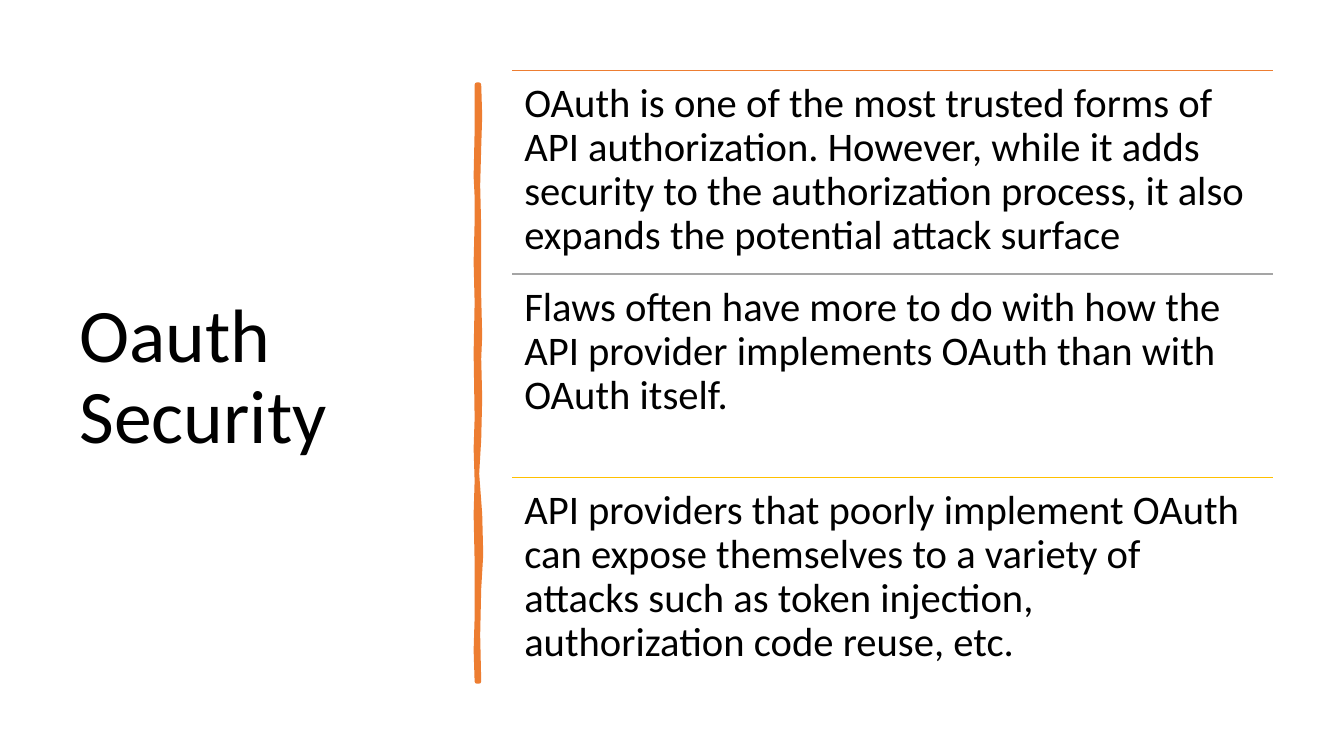
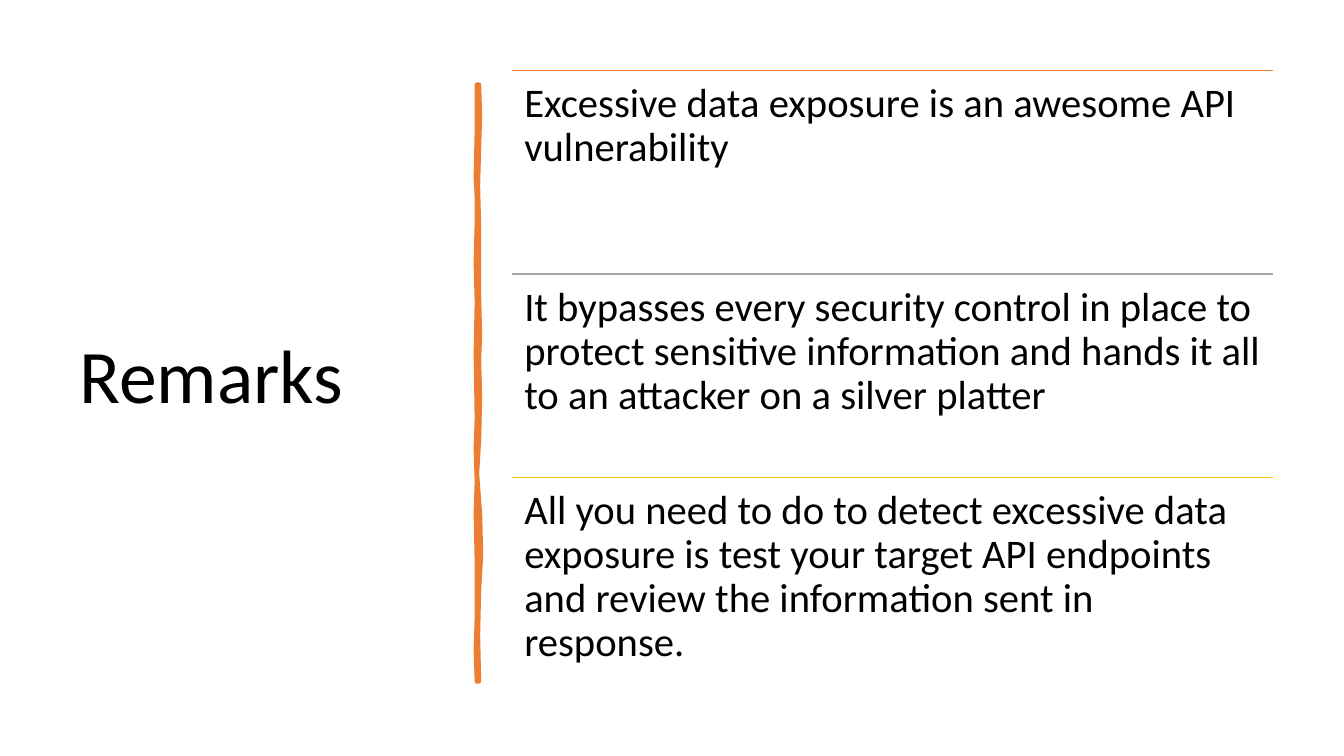
from lxml.etree import SubElement
from pptx import Presentation
from pptx.dml.color import RGBColor
from pptx.enum.shapes import MSO_CONNECTOR as Connector
from pptx.enum.text import MSO_ANCHOR as Anchor, PP_ALIGN as Align
from pptx.oxml.ns import qn
from pptx.util import Inches, Pt

BLACK = RGBColor(0x00, 0x00, 0x00)
ORANGE = RGBColor(0xED, 0x7D, 0x31)
GRAY = RGBColor(0xA5, 0xA5, 0xA5)
GOLD = RGBColor(0xFF, 0xC0, 0x00)

RULE_COLORS = (ORANGE, GRAY, GOLD)
ROW_LEFT, ROW_TOP, ROW_WIDTH, ROW_HEIGHT = 5.08, 0.7, 7.55, 2.02

BRUSH_RIGHT = (
    (4.75, 0.84), (4.76, 1.15), (4.75, 1.46), (4.74, 1.84), (4.75, 2.26),
    (4.75, 2.94), (4.76, 3.33), (4.75, 3.56), (4.76, 3.95), (4.75, 4.36),
    (4.73, 4.7), (4.76, 5.1), (4.77, 5.5), (4.75, 5.84), (4.74, 6.3), (4.75, 6.76),
)
BRUSH_LEFT = (
    (4.73, 6.76), (4.72, 6.45), (4.73, 6.13), (4.73, 5.57), (4.72, 5.1),
    (4.73, 4.77), (4.72, 4.45), (4.73, 4.15), (4.72, 3.5), (4.73, 3.0),
    (4.72, 2.6), (4.73, 2.2), (4.73, 1.95), (4.72, 1.75), (4.73, 1.3), (4.73, 0.84),
)

SLIDES = (
    ("Oauth Security", (
        "OAuth is one of the most trusted forms of API authorization. However, while "
        "it adds security to the authorization process, it also expands the "
        "potential attack surface",
        "Flaws often have more to do with how the API provider implements OAuth "
        "than with OAuth itself.",
        "API providers that poorly implement OAuth can expose themselves to a variety "
        "of attacks such as token injection, authorization code reuse, etc.",
    )),
    ("Remarks", (
        "Excessive data exposure is an awesome API vulnerability",
        "It bypasses every security control in place to protect sensitive "
        "information and hands it all to an attacker on a silver platter",
        "All you need to do to detect excessive data exposure is test your target "
        "API endpoints and review the information sent in response.",
    )),
)


class SlideWriter:
    """Draws styled elements on the current slide of a deck."""

    font = "Calibri"
    title_size = 54
    body_size = 29

    def __init__(self, deck):
        self.deck = deck
        self.page = None

    def new_page(self):
        self.page = self.deck.slides.add_slide(self.deck.slide_layouts[6])

    def text(self, words, left, top, width, height, size, inset, anchor=Anchor.TOP):
        box = self.page.shapes.add_textbox(
            Inches(left), Inches(top), Inches(width), Inches(height))
        frame = box.text_frame
        frame.word_wrap = True
        frame.vertical_anchor = anchor
        frame.margin_left = frame.margin_right = Inches(inset)
        frame.margin_top = frame.margin_bottom = Inches(inset)
        para = frame.paragraphs[0]
        para.alignment = Align.LEFT
        para.line_spacing = 0.9
        span = para.add_run()
        span.text = words
        span.font.name = self.font
        span.font.size = Pt(size)
        span.font.color.rgb = BLACK

    def title(self, words):
        self.text(words, 0.69, 0.7, 3.74, 6.11, self.title_size, 0.1, Anchor.MIDDLE)

    def brush_divider(self):
        start, *others = [(Inches(x), Inches(y)) for x, y in BRUSH_RIGHT + BRUSH_LEFT]
        builder = self.page.shapes.build_freeform(*start)
        builder.add_line_segments(others, close=True)
        brush = builder.convert_to_shape()
        brush.shadow.inherit = False
        brush.fill.solid()
        brush.fill.fore_color.rgb = ORANGE
        brush.line.color.rgb = ORANGE
        brush.line.width = Pt(3.25)
        SubElement(brush.line._get_or_add_ln(), qn("a:round"))

    def rule(self, top, color):
        line = self.page.shapes.add_connector(
            Connector.STRAIGHT, Inches(ROW_LEFT), Inches(top),
            Inches(ROW_LEFT + ROW_WIDTH), Inches(top))
        line.line.color.rgb = color
        line.line.width = Pt(1)
        SubElement(line._element.spPr, qn("a:effectLst"))

    def rows(self, statements):
        for index, (words, color) in enumerate(zip(statements, RULE_COLORS)):
            top = ROW_TOP + index * ROW_HEIGHT
            self.rule(top, color)
            self.text(words, ROW_LEFT, top, ROW_WIDTH, ROW_HEIGHT, self.body_size, 0.12)


def main():
    deck = Presentation()
    deck.slide_width = Inches(13.33)
    deck.slide_height = Inches(7.5)
    writer = SlideWriter(deck)
    for title, statements in SLIDES:
        writer.new_page()
        writer.title(title)
        writer.brush_divider()
        writer.rows(statements)
    deck.save("out.pptx")


if __name__ == "__main__":
    main()
